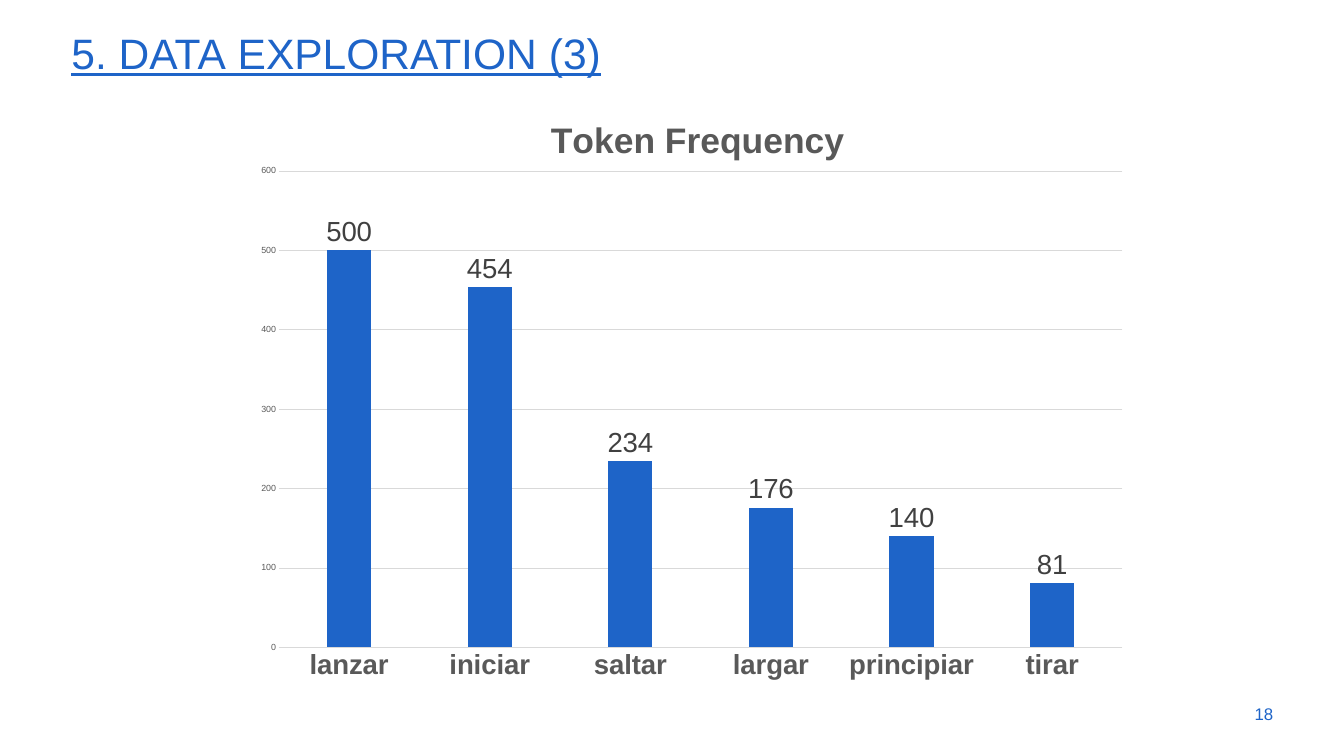
from dataclasses import dataclass

from pptx import Presentation
from pptx import util as u
from pptx.chart.data import CategoryChartData
from pptx.dml.color import RGBColor
from pptx.enum import chart as charts, text
from pptx.oxml import parse_xml
from pptx.oxml.ns import nsdecls, qn

PX = 9144
BLUE, GREY, DARK, LIGHT = "1E64C8", "595959", "404040", "D9D9D9"
TOKENS = {"lanzar": 500, "iniciar": 454, "saltar": 234,
          "largar": 176, "principiar": 140, "tirar": 81}


def color(value):
    return RGBColor.from_string(value)


def px(*lengths):
    return [u.Emu(length * PX) for length in lengths]


@dataclass
class SlideBuilder:
    """Holds the style and the current slide and adds elements to it."""
    slide: object
    font_name: str = "Arial"

    def style(self, font, size, hue, bold=False):
        font.name, font.size, font.bold = self.font_name, u.Pt(size), bold
        font.color.rgb = color(hue)

    def line(self, line_format, hue):
        line_format.color.rgb = color(hue)
        line_format.width = u.Pt(0.75)

    def label(self, box, words, size, align=text.PP_ALIGN.LEFT,
              anchor=text.MSO_ANCHOR.TOP):
        frame = self.slide.shapes.add_textbox(*px(*box)).text_frame
        frame.word_wrap = True
        frame.vertical_anchor = anchor
        paragraph = frame.paragraphs[0]
        paragraph.alignment = align
        run = paragraph.add_run()
        run.text = words
        self.style(run.font, size, BLUE)
        return paragraph, run

    def heading(self, box, words, size):
        paragraph, run = self.label(box, words, size)
        paragraph.line_spacing = 0.9
        run.font.underline = True
        run.font._element.set("cap", "small")

    def place(self, element, index, target="", **parts):
        layout = element.find(qn("c:layout"))
        if layout is not None:
            element.remove(layout)
        modes = "".join(f'<c:{part}Mode val="edge"/>' for part in "xy")
        values = "".join(f'<c:{part} val="{value}"/>' for part, value in parts.items())
        element.insert(index, parse_xml(
            f'<c:layout {nsdecls("c")}><c:manualLayout>{target}{modes}{values}'
            '</c:manualLayout></c:layout>'))

    def column_chart(self, box, title, values):
        data = CategoryChartData()
        data.categories = list(values)
        data.add_series("Series 1", list(values.values()))
        chart = self.slide.shapes.add_chart(
            charts.XL_CHART_TYPE.COLUMN_CLUSTERED, *px(*box), data).chart
        self.style(chart.font, 10, "000000")
        chart.has_legend = False
        self.chart_title(chart, title)
        self.axes(chart)
        self.columns(chart.plots[0])
        self.place(chart._chartSpace.chart.plotArea, 0,
                   '<c:layoutTarget val="inner"/>', x=0.039, y=0.13, w=0.94, h=0.793)

    def chart_title(self, chart, words):
        chart.has_title = True
        run = chart.chart_title.text_frame.paragraphs[0].add_run()
        run.text = words
        self.style(run.font, 36, GREY, bold=True)
        chart.chart_title.include_in_layout = False
        self.place(chart.chart_title._element, 1, x=0.335, y=0.03)

    def axes(self, chart):
        category, value = chart.category_axis, chart.value_axis
        for axis, size, bold in ((category, 28, True), (value, 9, False)):
            self.style(axis.tick_labels.font, size, GREY, bold)
            axis.major_tick_mark = axis.minor_tick_mark = charts.XL_TICK_MARK.NONE
        self.line(category.format.line, LIGHT)
        value.format.line.fill.background()
        value.minimum_scale, value.maximum_scale, value.major_unit = 0, 600, 100
        value.has_major_gridlines = True
        self.line(value.major_gridlines.format.line, LIGHT)

    def columns(self, plot):
        plot.gap_width, plot.overlap, plot.vary_by_categories = 219, -27, False
        series = plot.series[0]
        series.format.fill.solid()
        series.format.fill.fore_color.rgb = color(BLUE)
        labels = series.data_labels
        labels.show_value = True
        labels.position = charts.XL_LABEL_POSITION.OUTSIDE_END
        self.style(labels.font, 28, DARK)


def main():
    presentation = Presentation()
    presentation.slide_width, presentation.slide_height = px(1896, 1067)
    builder = SlideBuilder(presentation.slides.add_slide(presentation.slide_layouts[6]))
    builder.heading((91, 28, 1718, 94), "5. data exploration (3)", 54)
    builder.label((1705, 979, 101, 57), "18", 17.1,
                  text.PP_ALIGN.RIGHT, text.MSO_ANCHOR.MIDDLE)
    builder.column_chart((344, 131, 1266, 848), "Token Frequency", TOKENS)
    presentation.save("out.pptx")


if __name__ == "__main__":
    main()
